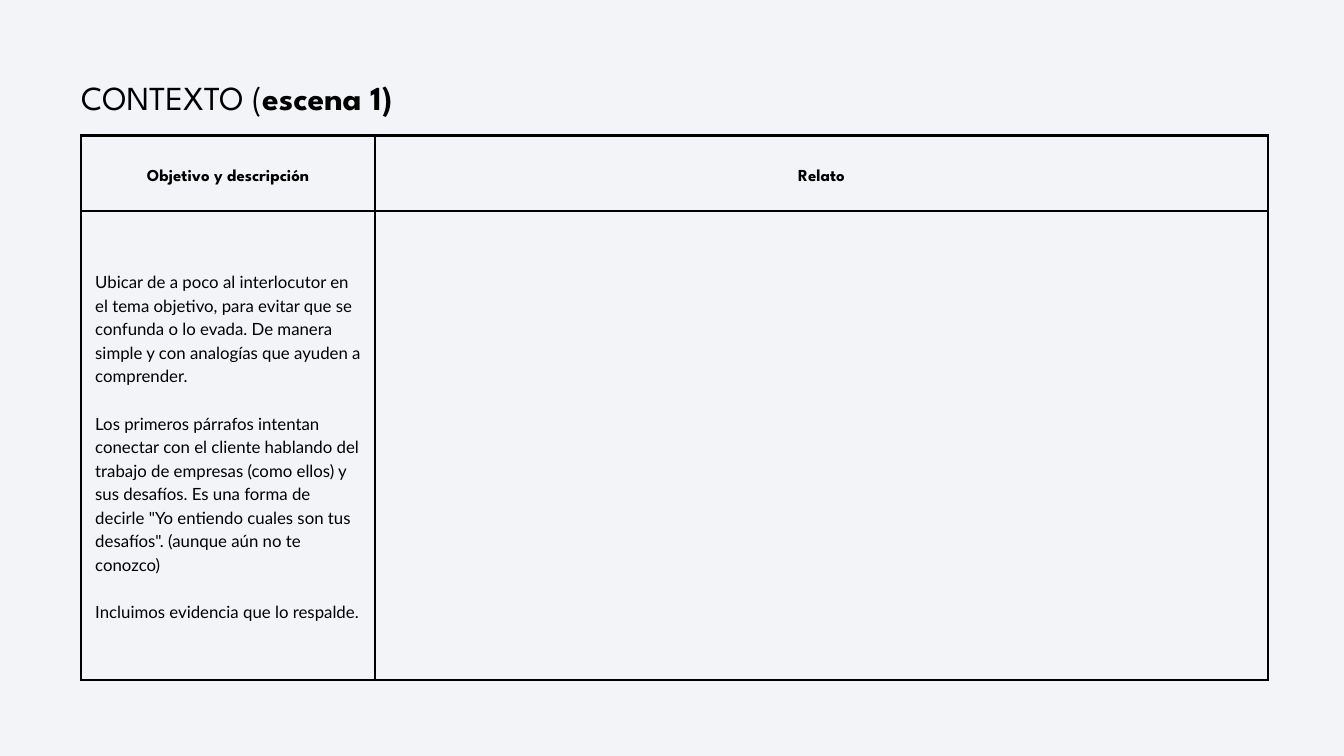
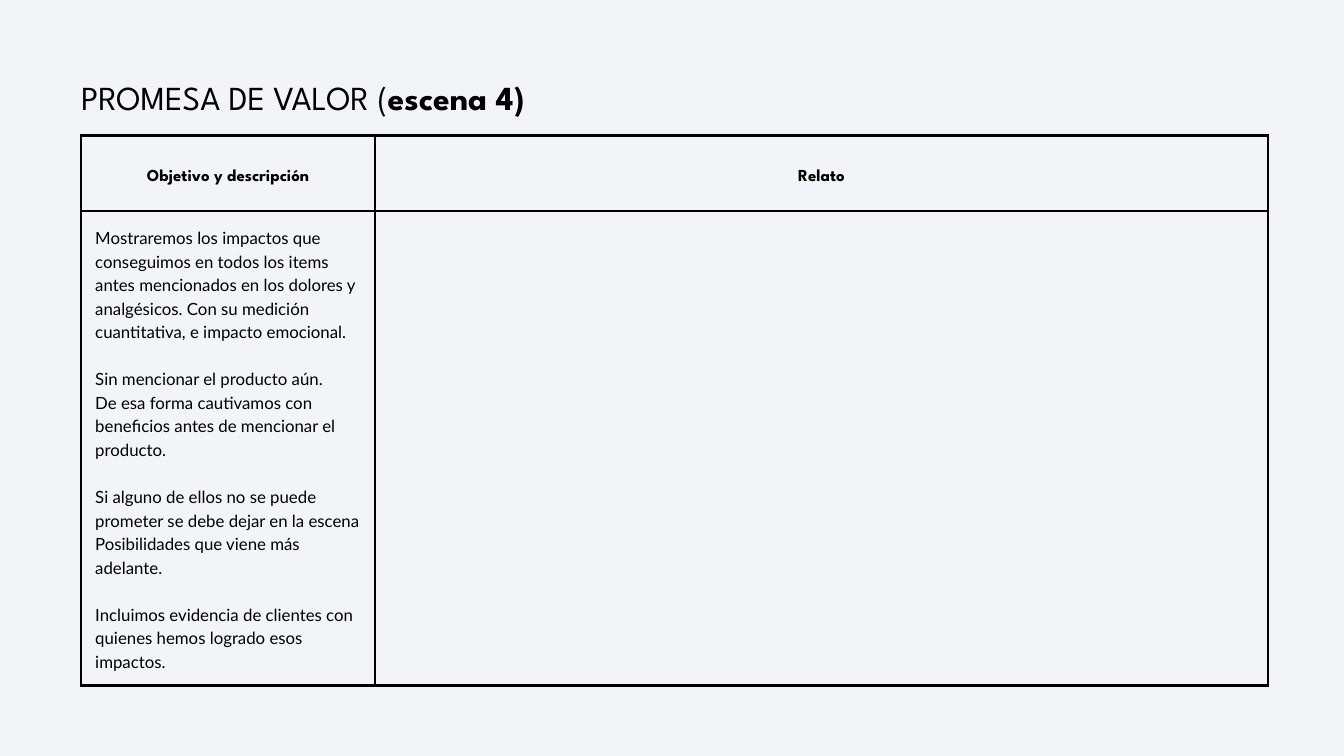
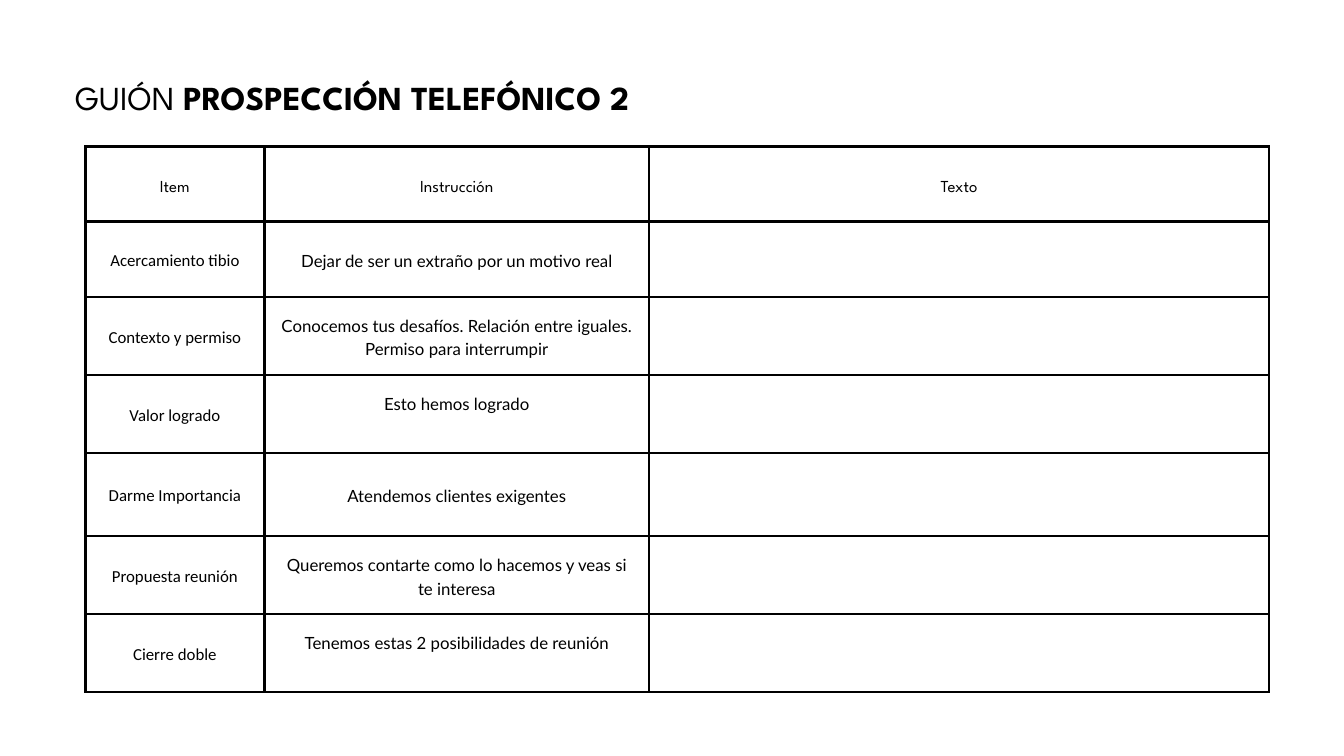
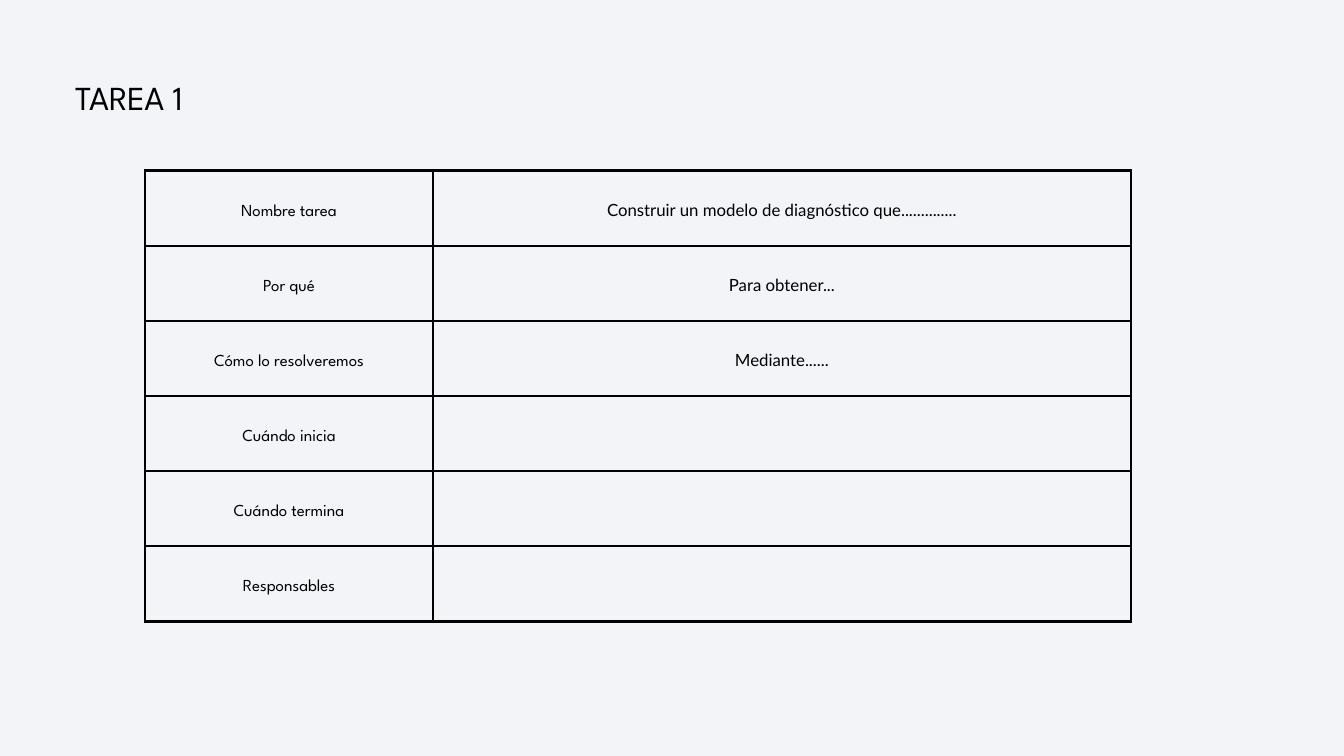
from lxml import etree
from pptx import Presentation
from pptx import util as u
from pptx.dml.color import RGBColor
from pptx.enum import text
from pptx.oxml import ns

Cm, Pt = u.Cm, u.Pt

BLACK = RGBColor(0x00, 0x00, 0x00)
WHITE = RGBColor(0xFF, 0xFF, 0xFF)
MIST = RGBColor(0xF2, 0xF4, 0xF7)
HEADING, BODY, LABEL = "League Spartan", "Lato", "Calibri"
LINE = Pt(25.2)
PADDING = Cm(0.53)
ROW = 2.84
LEFT, CENTER = text.PP_ALIGN.LEFT, text.PP_ALIGN.CENTER

SCENE_HEADER = ["Objetivo y descripción", "Relato"]
SCENE_COLUMNS = [11.1, 33.76]
# Each description is a list of blocks; a blank line's height separates them.
CONTEXT = [
    "Ubicar de a poco al interlocutor en el tema objetivo, para evitar que se "
    "confunda o lo evada. De manera simple y con analogías que ayuden a comprender.",
    "Los primeros párrafos intentan conectar con el cliente hablando del trabajo de "
    "empresas (como ellos) y sus desafíos. Es una forma de decirle \"Yo entiendo "
    "cuales son tus desafíos\". (aunque aún no te conozco)",
    "Incluimos evidencia que lo respalde.",
]
PROMISE = [
    "Mostraremos los impactos que conseguimos en todos los items antes mencionados en "
    "los dolores y analgésicos. Con su medición cuantitativa, e impacto emocional.",
    "Sin mencionar el producto aún.\n"
    "De esa forma cautivamos con beneficios antes de mencionar el producto.",
    "Si alguno de ellos no se puede prometer se debe dejar en la escena Posibilidades "
    "que viene más adelante.",
    "Incluimos evidencia de clientes con quienes hemos logrado esos impactos.",
]
CALL_SCRIPT = [
    ["Item", "Instrucción", "Texto"],
    ["Acercamiento tibio", "Dejar de ser un extraño por un motivo real", ""],
    ["Contexto y permiso",
     "Conocemos tus desafíos. Relación entre iguales. Permiso para interrumpir", ""],
    ["Valor logrado", "Esto hemos logrado", ""],
    ["Darme Importancia", "Atendemos clientes exigentes", ""],
    ["Propuesta reunión", "Queremos contarte como lo hacemos y veas si te interesa", ""],
    ["Cierre doble", "Tenemos estas 2 posibilidades de reunión", ""],
]
RAISED = ("Esto hemos logrado", "Tenemos estas 2 posibilidades de reunión")
TASK = [
    ["Nombre tarea", "Construir un modelo de diagnóstico que.............."],
    ["Por qué", "Para obtener..."],
    ["Cómo lo resolveremos", "Mediante......"],
    ["Cuándo inicia", ""],
    ["Cuándo termina", ""],
    ["Responsables", ""],
]

# Background, title (light, bold), title box, table corner, columns, rows, cells,
# font of each column, has a header row, header is bold, body alignment
SLIDES = [
    (MIST, ("CONTEXTO (", "escena 1)"), (3.07, 17.68, 3.48), (3.07, 5.13),
     SCENE_COLUMNS, [ROW, 17.73], [SCENE_HEADER, [CONTEXT, ""]],
     [BODY, BODY], True, True, LEFT),
    (MIST, ("PROMESA DE VALOR (", "escena 4)"), (3.07, 26.97, 1.7), (3.07, 5.13),
     SCENE_COLUMNS, [ROW, 17.88], [SCENE_HEADER, [PROMISE, ""]],
     [BODY, BODY], True, True, LEFT),
    (WHITE, ("GUIÓN", " PROSPECCIÓN TELEFÓNICO 2"), (2.84, 31.01, 1.7), (3.23, 5.54),
     [6.76, 14.55, 23.42], [ROW, ROW, 2.95, 2.95, 3.15, 2.95, 2.95], CALL_SCRIPT,
     [LABEL, BODY, BODY], True, False, CENTER),
    (MIST, ("TAREA 1",), (2.84, 8.36, 1.7), (5.49, 6.45),
     [10.87, 26.39], [ROW] * len(TASK), TASK,
     [HEADING, BODY], False, False, CENTER),
]


def style_run(run, font, size, bold):
    run.font.name, run.font.size, run.font.bold = font, Pt(size), bold
    run.font.color.rgb = BLACK


def fill_cell(cell, blocks, font, bold, align):
    """Draw the cell's borders and write its blocks of paragraphs."""
    properties = cell._tc.get_or_add_tcPr()
    for side in ("a:lnL", "a:lnR", "a:lnT", "a:lnB"):
        border = etree.SubElement(properties, ns.qn(side), w=str(Pt(3)))
        solid = etree.SubElement(border, ns.qn("a:solidFill"))
        etree.SubElement(solid, ns.qn("a:srgbClr"), val=str(BLACK))
    cell.fill.background()
    cell.vertical_anchor = text.MSO_ANCHOR.MIDDLE
    cell.margin_left = cell.margin_right = cell.margin_top = PADDING
    cell.margin_bottom = PADDING + LINE if blocks[0] in RAISED else PADDING
    cell.text_frame.text = "\n".join(blocks)
    block_starts, position = set(), 0
    for block in blocks:
        block_starts.add(position)
        position += len(block.split("\n"))
    for index, paragraph in enumerate(cell.text_frame.paragraphs):
        paragraph.alignment = align
        paragraph.line_spacing = LINE
        if index and index in block_starts:
            paragraph.space_before = LINE
        for run in paragraph.runs:
            style_run(run, font, 18, bold)


deck = Presentation()
deck.slide_width, deck.slide_height = Cm(50.8), Cm(28.58)

for (background, title, title_box, corner, columns, heights, cells, fonts,
     has_header, bold_header, body_align) in SLIDES:
    slide = deck.slides.add_slide(deck.slide_layouts[6])
    slide.background.fill.solid()
    slide.background.fill.fore_color.rgb = background

    grid = slide.shapes.add_table(
        len(heights), len(columns), Cm(corner[0]), Cm(corner[1]),
        Cm(sum(columns)), Cm(sum(heights))).table
    grid.first_row = grid.horz_banding = False
    for column, width in zip(grid.columns, columns):
        column.width = Cm(width)
    for row_number, (row, height) in enumerate(zip(grid.rows, heights)):
        row.height = Cm(height)
        is_header = has_header and row_number == 0
        for cell, content, font in zip(row.cells, cells[row_number], fonts):
            fill_cell(cell, [content] if isinstance(content, str) else content,
                      HEADING if is_header else font,
                      is_header and bold_header,
                      CENTER if is_header else body_align)

    left, width, height = title_box
    heading = slide.shapes.add_textbox(Cm(left), Cm(2.67), Cm(width), Cm(height)).text_frame
    heading.word_wrap = True
    heading.auto_size = text.MSO_AUTO_SIZE.SHAPE_TO_FIT_TEXT
    heading.margin_left = heading.margin_right = 0
    heading.margin_top = heading.margin_bottom = 0
    heading.paragraphs[0].line_spacing = Pt(50.4)
    for part_number, part in enumerate(title):
        run = heading.paragraphs[0].add_run()
        run.text = part
        style_run(run, HEADING, 36, part_number == 1)

deck.save("out.pptx")
